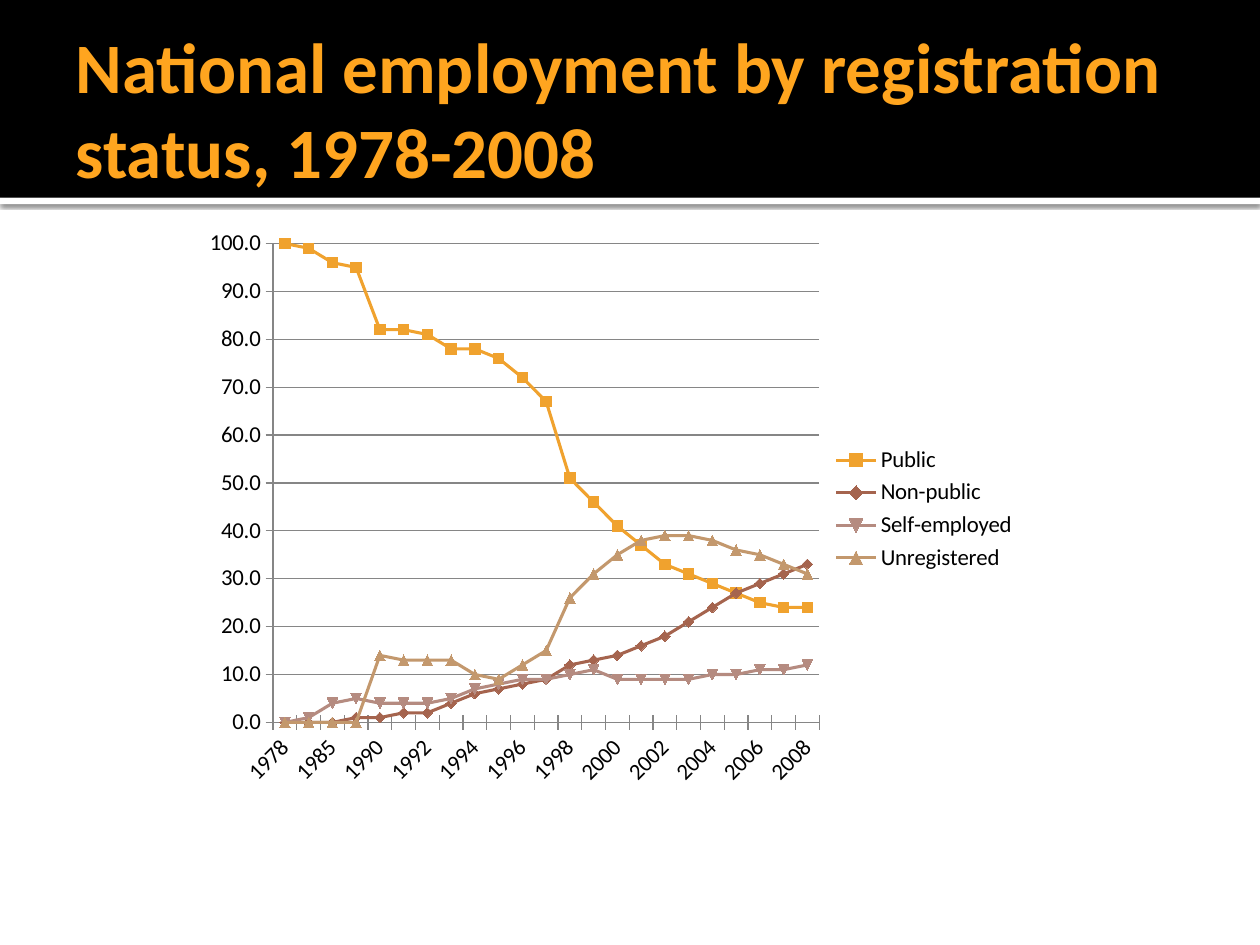
from lxml.etree import SubElement
from pptx import Presentation
from pptx.chart.data import CategoryChartData
from pptx.dml.color import RGBColor
from pptx.enum.chart import XL_CHART_TYPE as ChartType, XL_LEGEND_POSITION as LegendPosition
from pptx.enum.chart import XL_MARKER_STYLE as MarkerStyle, XL_TICK_MARK as TickMark
from pptx.enum.shapes import MSO_SHAPE as Shape
from pptx.enum.text import MSO_ANCHOR as Anchor, MSO_AUTO_SIZE as AutoSize, PP_ALIGN as Align
from pptx.oxml import parse_xml
from pptx.oxml.ns import nsdecls, qn
from pptx.util import Inches, Pt

YEARS = ["1978", "1980", "1985"] + [str(year) for year in range(1989, 2009)]
EMPLOYMENT = {
    "Public": ("F0A22E", [100, 99, 96, 95, 82, 82, 81, 78, 78, 76, 72, 67,
                          51, 46, 41, 37, 33, 31, 29, 27, 25, 24, 24]),
    "Non-public": ("A5644E", [0, 0, 0, 1, 1, 2, 2, 4, 6, 7, 8, 9,
                              12, 13, 14, 16, 18, 21, 24, 27, 29, 31, 33]),
    "Self-employed": ("B58B80", [0, 1, 4, 5, 4, 4, 4, 5, 7, 8, 9, 9,
                                 10, 11, 9, 9, 9, 9, 10, 10, 11, 11, 12]),
    "Unregistered": ("C3986D", [0, 0, 0, 0, 14, 13, 13, 13, 10, 9, 12, 15,
                                26, 31, 35, 38, 39, 39, 38, 36, 35, 33, 31]),
}
PLOT_AREA = {"x": 0.1, "y": 0.04, "w": 0.65, "h": 0.83}


def color(value):
    return RGBColor.from_string(value)


def set_values(target, values):
    for name, value in values.items():
        setattr(target, name, value)


def place(shape, left, top, width, height):
    set_values(shape, {"left": Inches(left), "top": Inches(top),
                       "width": Inches(width), "height": Inches(height)})


class SlideBuilder:
    font = "Calibri"
    title_color = "FFA51F"
    axis_color = "868686"

    def __init__(self, presentation):
        self.slide = presentation.slides.add_slide(presentation.slide_layouts[5])

    def band(self, top, height, fill, shadow=False):
        """Add a full-width rectangle behind the title."""
        shape = self.slide.shapes.add_shape(
            Shape.RECTANGLE, 0, Inches(top), Inches(10), Inches(height))
        shape.fill.solid()
        shape.fill.fore_color.rgb = color(fill)
        shape.line.fill.background()
        shape.shadow.inherit = False
        if shadow:
            effects = shape._element.spPr.find(qn("a:effectLst"))
            effects.append(parse_xml(
                f'<a:outerShdw {nsdecls("a")} blurRad="{Pt(2.5)}" dist="{Pt(0.8)}" '
                'dir="5400000" algn="tl" rotWithShape="0"><a:srgbClr val="000000">'
                '<a:alpha val="60000"/></a:srgbClr></a:outerShdw>'))
        self.slide.shapes.title._element.addprevious(shape._element)

    def title(self, text):
        title = self.slide.shapes.title
        place(title, 0.5, 0.17, 9, 1.37)
        frame = title.text_frame
        frame.text = text
        set_values(frame, {"word_wrap": True, "auto_size": AutoSize.NONE,
                           "vertical_anchor": Anchor.MIDDLE,
                           "margin_left": Inches(0.1), "margin_right": Inches(0.05),
                           "margin_top": Inches(0.05), "margin_bottom": Inches(0.05)})
        paragraph = frame.paragraphs[0]
        paragraph.alignment = Align.LEFT
        font = paragraph.runs[0].font
        set_values(font, {"name": self.font, "size": Pt(40.5), "bold": True})
        font.color.rgb = color(self.title_color)

    def text_style(self, font, size):
        set_values(font, {"name": self.font, "size": Pt(size)})
        font.color.rgb = color("000000")

    def line_style(self, line, value, width):
        line.color.rgb = color(value)
        line.width = Pt(width)

    def line_chart(self, categories, series_data):
        data = CategoryChartData(number_format="0.0")
        data.categories = categories
        for name, (_, values) in series_data.items():
            data.add_series(name, values)
        chart = self.slide.shapes.add_chart(
            ChartType.LINE_MARKERS, Inches(1.5), Inches(1.75),
            Inches(6.67), Inches(4.58), data).chart
        chart.has_title = False
        self.text_style(chart.font, 10)

        for axis in (chart.category_axis, chart.value_axis):
            set_values(axis, {"major_tick_mark": TickMark.CROSS,
                              "minor_tick_mark": TickMark.NONE})
            self.text_style(axis.tick_labels.font, 13)
            self.line_style(axis.format.line, self.axis_color, 0.75)
        set_values(chart.value_axis, {"minimum_scale": 0, "maximum_scale": 100,
                                      "major_unit": 10, "has_major_gridlines": True})
        self.line_style(chart.value_axis.major_gridlines.format.line, self.axis_color, 0.75)
        set_values(chart.value_axis.tick_labels,
                   {"number_format": "0.0", "number_format_is_linked": False})
        self.slant_labels(chart.category_axis)

        chart.has_legend = True
        set_values(chart.legend, {"position": LegendPosition.RIGHT,
                                  "include_in_layout": False})
        self.text_style(chart.legend.font, 13)

        plot = chart.plots[0]
        plot.vary_by_categories = False
        for series, (value, _) in zip(plot.series, series_data.values()):
            series.smooth = False
            self.line_style(series.format.line, value, 1.75)
            set_values(series.marker, {"style": MarkerStyle.AUTOMATIC, "size": 6})
            series.marker.format.fill.solid()
            series.marker.format.fill.fore_color.rgb = color(value)
            self.line_style(series.marker.format.line, value, 0.75)
        self.lay_out_plot(chart)

    def slant_labels(self, axis):
        """Turn the labels by 45 degrees and show every second one."""
        element = axis._element
        element.find(qn("c:txPr")).find(qn("a:bodyPr")).set("rot", "-2700000")
        skip = parse_xml(f'<c:tickLblSkip {nsdecls("c")} val="2"/>')
        element.find(qn("c:noMultiLvlLbl")).addprevious(skip)

    def lay_out_plot(self, chart):
        plot_area = chart._chartSpace.chart.plotArea
        layout = plot_area.find(qn("c:layout"))
        if layout is None:
            layout = parse_xml(f'<c:layout {nsdecls("c")}/>')
            plot_area.insert(0, layout)
        manual = SubElement(layout, qn("c:manualLayout"))
        settings = {"layoutTarget": "inner", "xMode": "edge", "yMode": "edge", **PLOT_AREA}
        for name, value in settings.items():
            SubElement(manual, qn(f"c:{name}")).set("val", str(value))


def main():
    presentation = Presentation()
    set_values(presentation, {"slide_width": Inches(10), "slide_height": Inches(7.5)})
    builder = SlideBuilder(presentation)
    builder.band(1.57, 0.05, "FFFFFF", shadow=True)
    builder.band(0, 1.57, "000000")
    builder.title("National employment by registration status, 1978-2008")
    builder.line_chart(YEARS, EMPLOYMENT)
    presentation.save("out.pptx")


if __name__ == "__main__":
    main()
